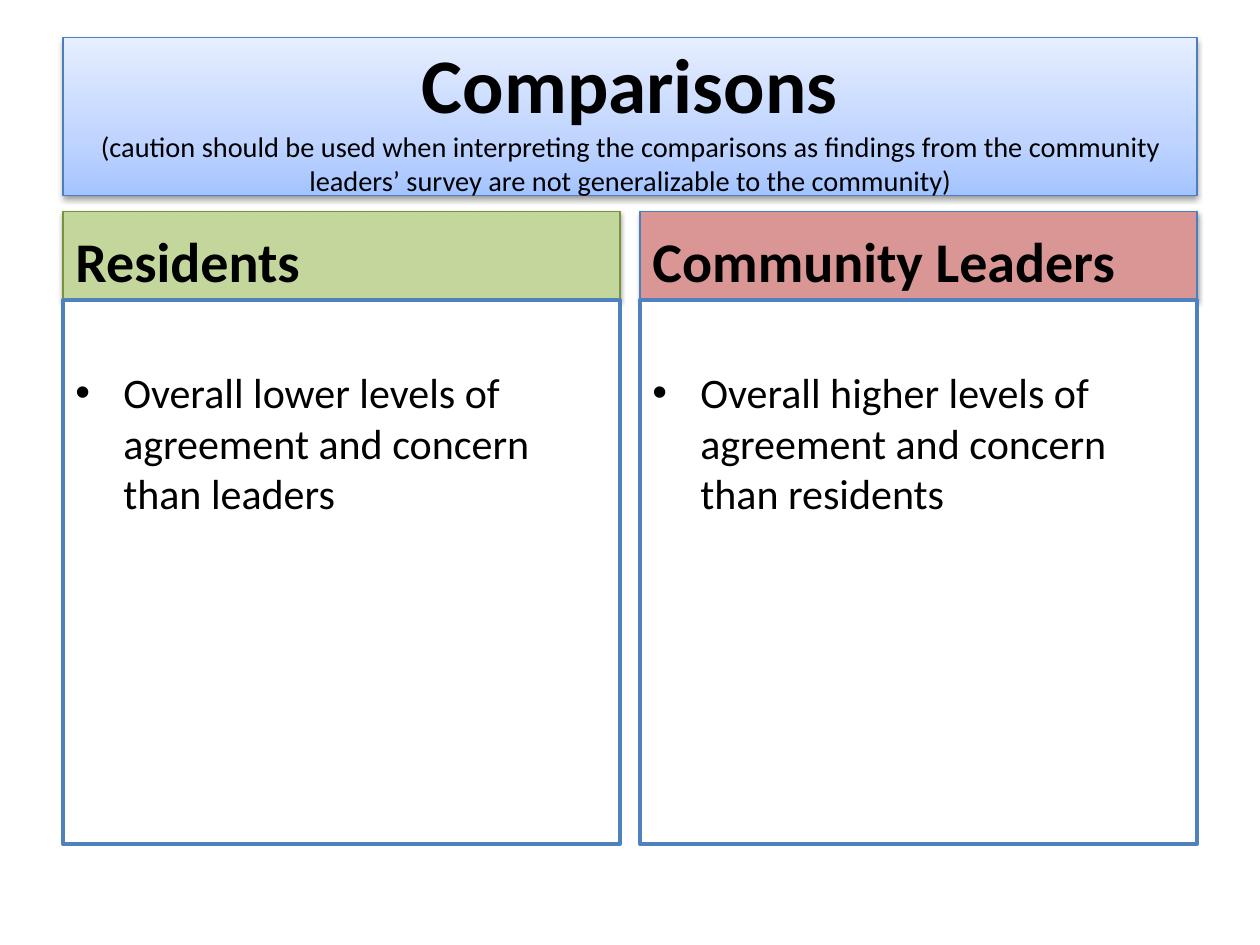
import copy

import lxml.etree
import pptx
import pptx.dml.color
import pptx.enum.shapes
import pptx.enum.text
import pptx.oxml.ns
import pptx.util

Inches = pptx.util.Inches
Pt = pptx.util.Pt
qn = pptx.oxml.ns.qn
ANCHOR = pptx.enum.text.MSO_ANCHOR
ALIGN = pptx.enum.text.PP_ALIGN

HEADING = "Comparisons"
CAUTION = (
    "(caution should be used when interpreting the comparisons as findings "
    "from the community leaders’ survey are not generalizable to the community)"
)
GROUPS = [
    {
        "name": "Residents",
        "finding": "Overall lower levels of agreement and concern than leaders",
        "fill": "resident_fill",
        "line": "resident_line",
    },
    {
        "name": "Community Leaders",
        "finding": "Overall higher levels of agreement and concern than residents",
        "fill": "leader_fill",
        "line": "banner_line",
    },
]

THEME = {
    "font": "Calibri",
    "text": "000000",
    "banner_stops": [(0, "A4C4FF"), (0.35, "BFD4FF"), (1, "E6EEFF")],
    "banner_line": "4B7EBC",
    "resident_fill": "C3D69B",
    "resident_line": "77933C",
    "leader_fill": "D99694",
    "panel_fill": "FFFFFF",
    "panel_line": "4F81BD",
    "heading_size": 44.1,
    "caution_size": 16.2,
    "name_size": 32,
    "finding_size": 24,
    "thin": 0.75,
    "thick": 2,
}

SLIDE_W, SLIDE_H = 10, 7.5
MARGIN = 0.5
COLUMN_GAP = 0.16
BANNER_TOP, BANNER_H = 0.3, 1.25
NAME_TOP, NAME_H = 1.68, 0.7
PANEL_H = 4.32
PANEL_INSET = 0.53
BULLET_INDENT = 0.38


def rgb(value):
    return pptx.dml.color.RGBColor.from_string(value)


def add_box(slide, left, top, width, height, fill, line, weight, anchor):
    box = slide.shapes.add_shape(
        pptx.enum.shapes.MSO_SHAPE.RECTANGLE,
        Inches(left), Inches(top), Inches(width), Inches(height),
    )
    if fill:
        box.fill.solid()
        box.fill.fore_color.rgb = rgb(THEME[fill])
    box.line.color.rgb = rgb(THEME[line])
    box.line.width = Pt(THEME[weight])
    box.shadow.inherit = False
    box.text_frame.word_wrap = True
    box.text_frame.vertical_anchor = anchor
    return box


def add_gradient(box, stops):
    box.fill.gradient()
    box.fill.gradient_angle = 90
    stop_list = box._element.spPr.find(qn("a:gradFill")).find(qn("a:gsLst"))
    while len(stop_list) < len(stops):
        stop_list.append(copy.deepcopy(stop_list[0]))
    for stop, (position, color) in zip(box.fill.gradient_stops, stops):
        stop.position = position
        stop.color.rgb = rgb(color)


def add_shadow(box):
    effects = box._element.spPr.find(qn("a:effectLst"))
    shadow = lxml.etree.SubElement(
        effects, qn("a:outerShdw"),
        blurRad=str(Pt(3.1)), dist=str(Pt(1.6)), dir="5400000", rotWithShape="0",
    )
    color = lxml.etree.SubElement(shadow, qn("a:srgbClr"), val="000000")
    lxml.etree.SubElement(color, qn("a:alpha"), val="38000")


def add_bullet(paragraph):
    properties = paragraph._p.get_or_add_pPr()
    properties.set("marL", str(Inches(BULLET_INDENT)))
    properties.set("indent", str(Inches(-BULLET_INDENT)))
    lxml.etree.SubElement(properties, qn("a:buFont"), typeface="Arial")
    lxml.etree.SubElement(properties, qn("a:buChar"), char="•")


def set_text(box, text, align, styles):
    paragraph = box.text_frame.paragraphs[0]
    paragraph.text = text
    paragraph.alignment = align
    for run, (size, bold) in zip(paragraph.runs, styles):
        run.font.name = THEME["font"]
        run.font.size = Pt(THEME[size])
        run.font.bold = bold
        run.font.color.rgb = rgb(THEME["text"])
    return paragraph


def add_banner(slide):
    banner = add_box(slide, MARGIN, BANNER_TOP, SLIDE_W - 2 * MARGIN, BANNER_H,
                     None, "banner_line", "thin", ANCHOR.MIDDLE)
    add_gradient(banner, THEME["banner_stops"])
    add_shadow(banner)
    set_text(banner, HEADING + "\v" + CAUTION, ALIGN.CENTER,
             [("heading_size", True), ("caution_size", False)])


def add_group(slide, group, left, width):
    name = add_box(slide, left, NAME_TOP, width, NAME_H,
                   group["fill"], group["line"], "thin", ANCHOR.BOTTOM)
    add_shadow(name)
    set_text(name, group["name"], ALIGN.LEFT, [("name_size", True)])

    panel = add_box(slide, left, NAME_TOP + NAME_H, width, PANEL_H,
                    "panel_fill", "panel_line", "thick", ANCHOR.TOP)
    panel.text_frame.margin_top = Inches(PANEL_INSET)
    add_bullet(set_text(panel, group["finding"], ALIGN.LEFT,
                        [("finding_size", False)]))


def main():
    deck = pptx.Presentation()
    deck.slide_width, deck.slide_height = Inches(SLIDE_W), Inches(SLIDE_H)
    slide = deck.slides.add_slide(deck.slide_layouts[6])
    add_banner(slide)
    column = (SLIDE_W - 2 * MARGIN - COLUMN_GAP) / len(GROUPS)
    for index, group in enumerate(GROUPS):
        add_group(slide, group, MARGIN + index * (column + COLUMN_GAP), column)
    deck.save("out.pptx")


if __name__ == "__main__":
    main()
